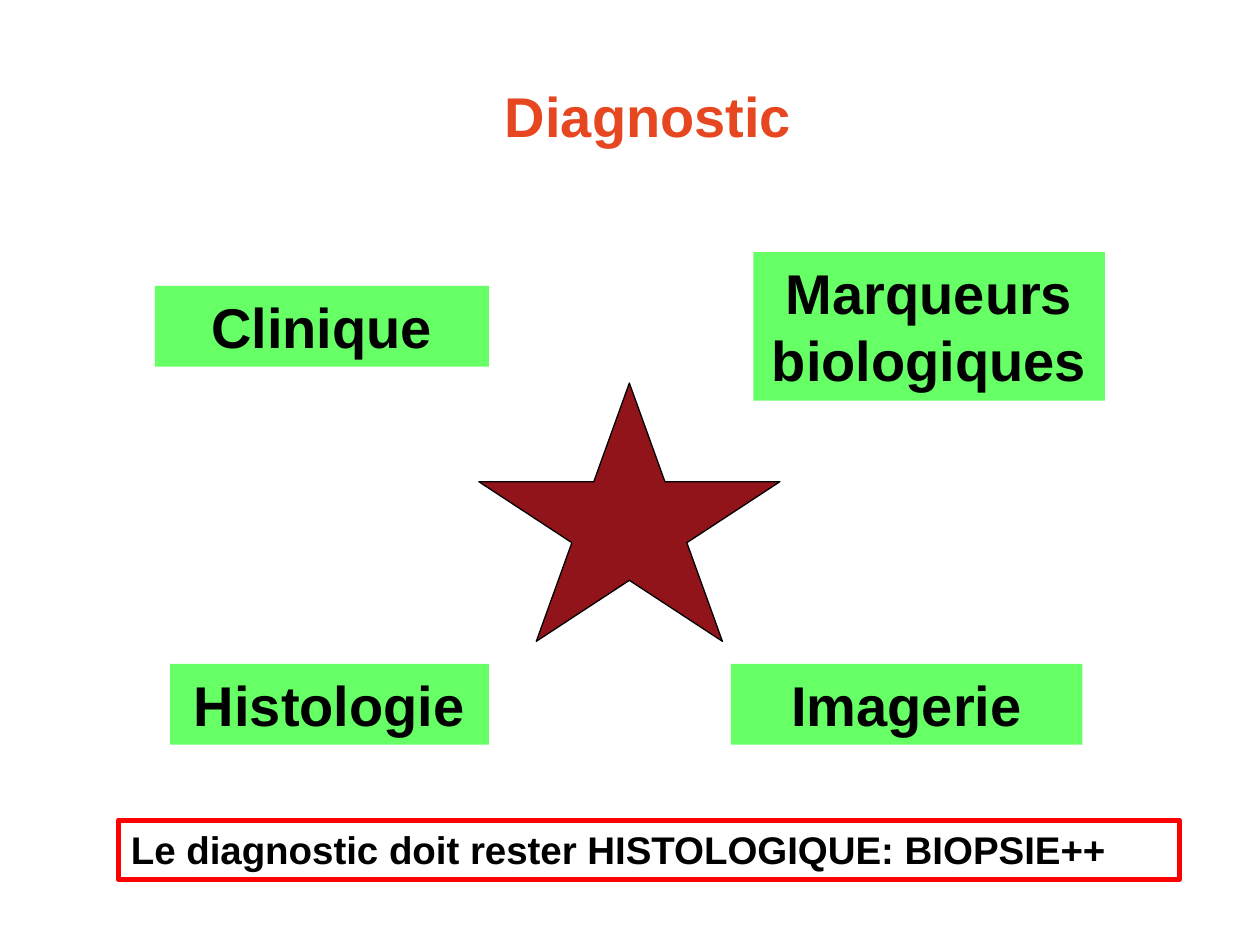
from dataclasses import dataclass

from pptx import Presentation
from pptx import util as u
from pptx.dml.color import RGBColor
from pptx.enum import shapes, text

BLACK = "000000"
GREEN = "66FF66"
ORANGE = "E64721"
DARK_RED = "90141A"
RED = "FF0000"


@dataclass
class Label:
    content: str
    left: float
    top: float
    width: float
    height: float
    size: int = 32
    color: str = BLACK
    fill: str | None = GREEN
    line: str | None = None
    align: text.PP_ALIGN = text.PP_ALIGN.CENTER
    anchor: text.MSO_ANCHOR = text.MSO_ANCHOR.TOP
    fit: text.MSO_AUTO_SIZE = text.MSO_AUTO_SIZE.SHAPE_TO_FIT_TEXT


LABELS = [
    Label("Diagnostic", 1, 0.44, 8.29, 0.95, color=ORANGE, fill=None,
          anchor=text.MSO_ANCHOR.MIDDLE, fit=text.MSO_AUTO_SIZE.NONE),
    Label("Clinique", 1.23, 2.27, 2.65, 0.64),
    Label("Imagerie", 5.8, 5.27, 2.79, 0.64),
    Label("Marqueurs biologiques", 5.98, 2, 2.79, 1.18),
    Label("Histologie", 1.35, 5.27, 2.53, 0.64),
]
CONCLUSION = Label("Le diagnostic doit rester HISTOLOGIQUE: BIOPSIE++",
                   0.94, 6.51, 8.42, 0.47, size=22, fill=None, line=RED,
                   align=text.PP_ALIGN.LEFT)


def rgb(value: str) -> RGBColor:
    return RGBColor.from_string(value)


def add_label(s, label: Label) -> None:
    sp = s.shapes.add_textbox(u.Inches(label.left), u.Inches(label.top),
                              u.Inches(label.width), u.Inches(label.height))
    if label.fill:
        sp.fill.solid()
        sp.fill.fore_color.rgb = rgb(label.fill)
    if label.line:
        sp.line.color.rgb = rgb(label.line)
        sp.line.width = u.Pt(3)
    tf = sp.text_frame
    tf.word_wrap = True
    tf.auto_size = label.fit
    tf.vertical_anchor = label.anchor
    p = tf.paragraphs[0]
    p.text = label.content
    p.alignment = label.align
    p.font.name = "Arial"
    p.font.size = u.Pt(label.size)
    p.font.bold = True
    p.font.color.rgb = rgb(label.color)


def add_star(s) -> None:
    sp = s.shapes.add_shape(shapes.MSO_SHAPE.STAR_5_POINT, u.Inches(3.8),
                            u.Inches(3.04), u.Inches(2.39), u.Inches(2.05))
    sp.shadow.inherit = False
    sp.fill.solid()
    sp.fill.fore_color.rgb = rgb(DARK_RED)
    sp.line.color.rgb = rgb(BLACK)
    sp.line.width = u.Pt(0.75)


def main() -> None:
    prs = Presentation()
    prs.slide_width = u.Inches(10)
    prs.slide_height = u.Inches(7.5)
    s = prs.slides.add_slide(prs.slide_layouts[6])
    for label in LABELS:
        add_label(s, label)
    add_star(s)
    add_label(s, CONCLUSION)
    prs.save("out.pptx")


if __name__ == "__main__":
    main()
